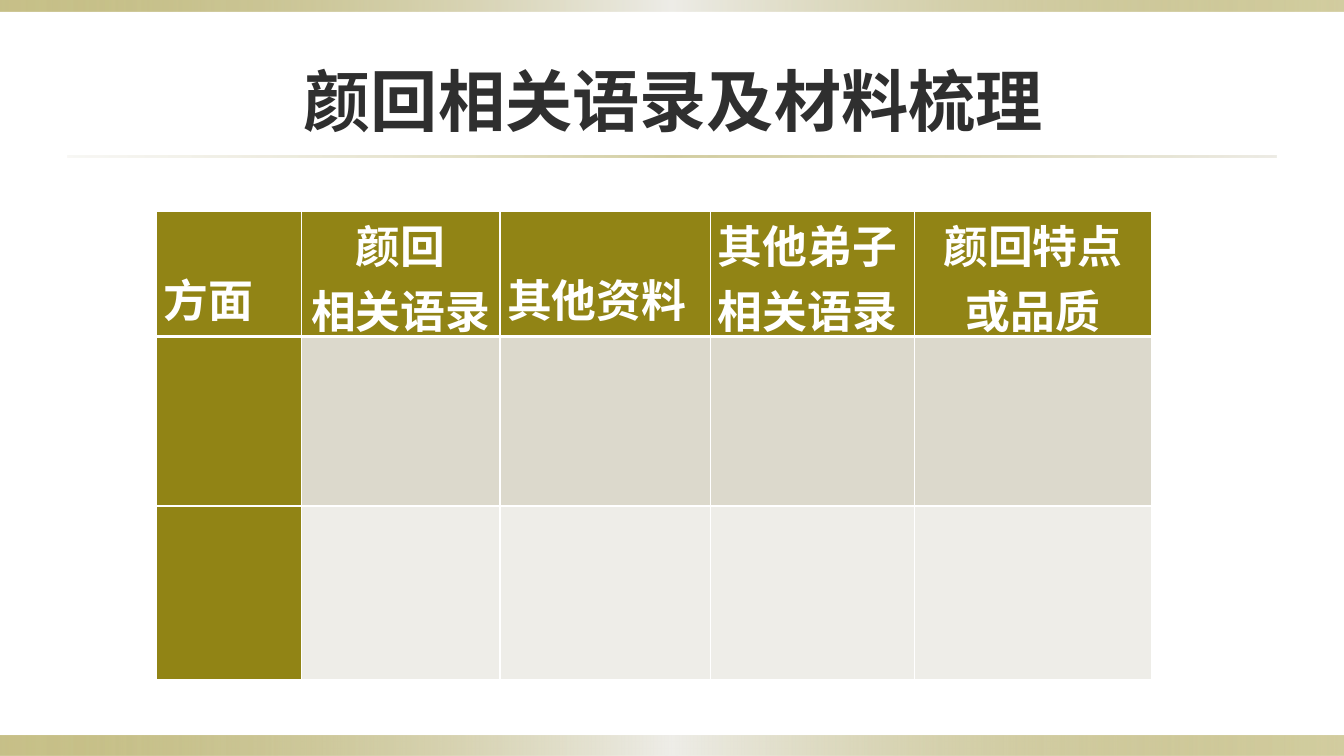
from pptx import Presentation
from pptx import util as u
from pptx.dml.color import RGBColor
from pptx.enum import shapes, text
from pptx.oxml import ns, xmlchemy

OLIVE = RGBColor(0x91, 0x84, 0x15)
SAND = RGBColor(0xDC, 0xD9, 0xCC)
PALE = RGBColor(0xEE, 0xED, 0xE8)
INK = RGBColor(0x2F, 0x2F, 0x2F)
WHITE = RGBColor(0xFF, 0xFF, 0xFF)

LEFT, CENTER = text.PP_ALIGN.LEFT, text.PP_ALIGN.CENTER
BAND = [(0, OLIVE, 50), (50, PALE, 100), (100, OLIVE, 40)]
RULE = [(0, SAND, 20), (50, OLIVE, 40), (100, SAND, 50)]
HEADERS = [
    (["方面"], LEFT),
    (["颜回", "相关语录"], CENTER),
    (["其他资料"], LEFT),
    (["其他弟子", "相关语录"], LEFT),
    (["颜回特点", "或品质"], CENTER),
]
COLS = [3.66, 5, 5.31, 5.13, 5.99]
ROWS = [3.15, 4.27, 4.37]
ROW_FILLS = [OLIVE, SAND, PALE]


def add_child(parent, tag, **attrs):
    child = xmlchemy.OxmlElement(tag)
    for name, value in attrs.items():
        child.set(name, str(value))
    parent.append(child)
    return child


class Deck:
    """Holds the slide and its style, with one method per kind of element."""

    title_font, table_font = "Arial", "Lato"
    title_size, header_size = u.Pt(48), u.Pt(32)

    def __init__(self):
        self.prs = Presentation()
        self.prs.slide_width, self.prs.slide_height = u.Cm(33.87), u.Cm(19.05)
        self.s = self.prs.slides.add_slide(self.prs.slide_layouts[6])

    def style(self, p, font, size, color, align):
        p.alignment = align
        p.font.name, p.font.size, p.font.bold = font, size, True
        p.font.color.rgb = color

    def gradient_bar(self, x, y, w, h, stops):
        sp = self.s.shapes.add_shape(
            shapes.MSO_SHAPE.RECTANGLE, u.Cm(x), u.Cm(y), u.Cm(w), u.Cm(h))
        sp.shadow.inherit = False
        sp.line.fill.background()
        sp.fill.gradient()
        sp.fill.gradient_angle = 0
        stop_list = sp._element.spPr.find(".//" + ns.qn("a:gsLst"))
        for gs in list(stop_list):
            stop_list.remove(gs)
        for pos, color, alpha in stops:
            gs = add_child(stop_list, "a:gs", pos=pos * 1000)
            clr = add_child(gs, "a:srgbClr", val=color)
            add_child(clr, "a:alpha", val=alpha * 1000)

    def title(self, x, y, w, h, words):
        tf = self.s.shapes.add_textbox(u.Cm(x), u.Cm(y), u.Cm(w), u.Cm(h)).text_frame
        tf.word_wrap = True
        tf.vertical_anchor = text.MSO_ANCHOR.MIDDLE
        tf.text = words
        self.style(tf.paragraphs[0], self.title_font, self.title_size, INK, CENTER)

    def borders(self, cell, top, bottom):
        tc_pr = cell._tc.get_or_add_tcPr()
        for side, width in zip("LRTB", (1, 1, top, bottom)):
            ln = add_child(tc_pr, f"a:ln{side}", w=u.Pt(width))
            add_child(add_child(ln, "a:solidFill"), "a:srgbClr", val=WHITE)

    def header(self, cell, lines, align):
        cell.margin_left = cell.margin_right = u.Cm(0.18)
        cell.margin_top = u.Cm(1.36 if len(lines) == 1 else 0)
        cell.margin_bottom = 0
        cell.text = "\n".join(lines)
        for p in cell.text_frame.paragraphs:
            self.style(p, self.table_font, self.header_size, WHITE, align)

    def table(self, x, y, cols, rows, headers):
        tbl = self.s.shapes.add_table(
            len(rows), len(cols), u.Cm(x), u.Cm(y),
            u.Cm(sum(cols)), u.Cm(sum(rows))).table
        for column, width in zip(tbl.columns, cols):
            column.width = u.Cm(width)
        for i, (row, height) in enumerate(zip(tbl.rows, rows)):
            row.height = u.Cm(height)
            for j, cell in enumerate(row.cells):
                self.borders(cell, 3 if i == 1 else 1, 3 if i == 0 else 1)
                cell.fill.solid()
                cell.fill.fore_color.rgb = OLIVE if j == 0 else ROW_FILLS[i]
        for cell, (lines, align) in zip(tbl.rows[0].cells, headers):
            self.header(cell, lines, align)


def main():
    deck = Deck()
    deck.gradient_bar(0, 18.54, 33.87, 0.51, BAND)
    deck.gradient_bar(0, 0, 33.87, 0.3, BAND)
    deck.gradient_bar(1.7, 3.91, 30.48, 0.06, RULE)
    deck.title(5.54, 0.91, 22.86, 3.18, "颜回相关语录及材料梳理")
    deck.table(3.94, 5.33, COLS, ROWS, HEADERS)
    deck.prs.save("out.pptx")


if __name__ == "__main__":
    main()
